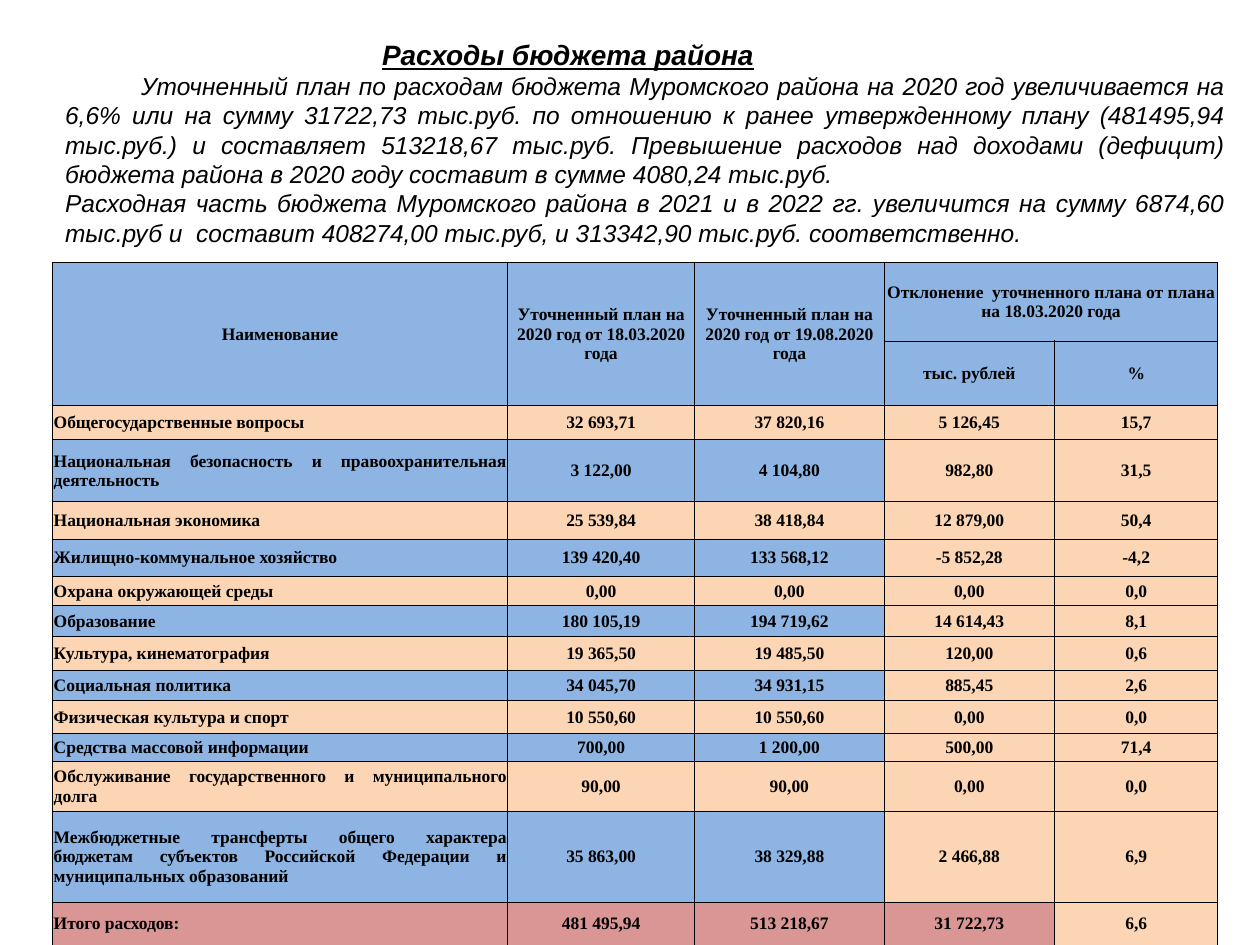
import dataclasses
import typing

import pptx
import pptx.dml.color
import pptx.enum.text
import pptx.oxml
import pptx.oxml.ns
import pptx.util

Pt = pptx.util.Pt
Align = pptx.enum.text.PP_ALIGN
Anchor = pptx.enum.text.MSO_ANCHOR


@dataclasses.dataclass(frozen=True)
class Theme:
    ink: str = "000000"
    blue: str = "8DB4E2"
    peach: str = "FCD5B4"
    rose: str = "DA9694"
    sans: str = "Arial"
    serif: str = "Times New Roman"
    title: float = 16
    body: float = 14
    cell: float = 10
    border: float = 0.5


class Item(typing.NamedTuple):
    name: str
    plan: str
    update: str
    change: str
    percent: str
    height: float


class Head(typing.NamedTuple):
    text: str
    row: int
    col: int
    rows: int = 1
    cols: int = 1


THEME = Theme()
TITLE = "Расходы бюджета района"
BODY = [
    "Уточненный план по расходам бюджета Муромского района на 2020 год увеличивается на 6,6% "
    "или на сумму 31722,73 тыс.руб. по отношению к ранее утвержденному плану (481495,94 тыс.руб.) "
    "и составляет 513218,67 тыс.руб. Превышение расходов над доходами (дефицит) бюджета района "
    "в 2020 году составит в сумме 4080,24 тыс.руб.",
    "Расходная часть бюджета Муромского района в 2021 и в 2022 гг. увеличится на сумму 6874,60 "
    "тыс.руб и  составит 408274,00 тыс.руб, и 313342,90 тыс.руб. соответственно.",
]
WIDTHS = [260, 107, 108.2, 97.4, 93.4]
HEAD_ROWS = [45, 36.8]
HEADS = [
    Head("Наименование", 0, 0, rows=2),
    Head("Уточненный план на 2020 год от 18.03.2020 года", 0, 1, rows=2),
    Head("Уточненный план на 2020 год от 19.08.2020 года", 0, 2, rows=2),
    Head("Отклонение  уточненного плана от плана на 18.03.2020 года", 0, 3, cols=2),
    Head("тыс. рублей", 1, 3),
    Head("%", 1, 4),
]
ITEMS = [
    Item("Общегосударственные вопросы", "32 693,71", "37 820,16", "5 126,45", "15,7", 19.4),
    Item("Национальная безопасность и правоохранительная деятельность",
         "3 122,00", "4 104,80", "982,80", "31,5", 35.4),
    Item("Национальная экономика", "25 539,84", "38 418,84", "12 879,00", "50,4", 21.6),
    Item("Жилищно-коммунальное хозяйство",
         "139 420,40", "133 568,12", "-5 852,28", "-4,2", 21.2),
    Item("Охрана окружающей среды", "0,00", "0,00", "0,00", "0,0", 16.6),
    Item("Образование", "180 105,19", "194 719,62", "14 614,43", "8,1", 17.8),
    Item("Культура, кинематография", "19 365,50", "19 485,50", "120,00", "0,6", 19.4),
    Item("Социальная политика", "34 045,70", "34 931,15", "885,45", "2,6", 17.2),
    Item("Физическая культура и спорт", "10 550,60", "10 550,60", "0,00", "0,0", 18.8),
    Item("Средства массовой информации", "700,00", "1 200,00", "500,00", "71,4", 16),
    Item("Обслуживание государственного и муниципального долга",
         "90,00", "90,00", "0,00", "0,0", 28.6),
    Item("Межбюджетные трансферты общего характера бюджетам субъектов Российской Федерации "
         "и муниципальных образований", "35 863,00", "38 329,88", "2 466,88", "6,9", 52),
    Item("Итого расходов:", "481 495,94", "513 218,67", "31 722,73", "6,6", 24.6),
]


def write(para, text: str, *, size: float, face: str, align=Align.CENTER, bold=False,
          slant=False, under=False, indent: float = 0, tab: float = 0) -> None:
    """Fill a paragraph; tab adds one left tab stop at that distance."""
    props = para._p.get_or_add_pPr()
    if indent:
        props.set("indent", str(Pt(indent)))
    if tab:
        stops = pptx.oxml.parse_xml(
            f'<a:tabLst {pptx.oxml.ns.nsdecls("a")}><a:tab pos="{Pt(tab)}" algn="l"/></a:tabLst>')
        props.append(stops)
    para.alignment = align
    para.space_before = para.space_after = Pt(0)
    para.line_spacing = 1.0
    run = para.add_run()
    run.text = text
    font = run.font
    font.size, font.name = Pt(size), face
    font.bold, font.italic, font.underline = bold, slant, under
    font.color.rgb = pptx.dml.color.RGBColor.from_string(THEME.ink)


def clear(frame) -> None:
    frame.word_wrap = True
    frame.auto_size = pptx.enum.text.MSO_AUTO_SIZE.NONE
    frame.vertical_anchor = Anchor.TOP
    frame.margin_left = frame.margin_right = frame.margin_top = frame.margin_bottom = 0


def paint(cell, fill: str) -> None:
    """Set the borders, fill, margins and anchor of a cell."""
    props = cell._tc.get_or_add_tcPr()
    for side in ("lnL", "lnR", "lnT", "lnB"):
        props.append(pptx.oxml.parse_xml(
            f'<a:{side} {pptx.oxml.ns.nsdecls("a")} w="{Pt(THEME.border)}">'
            f'<a:solidFill><a:srgbClr val="{THEME.ink}"/></a:solidFill></a:{side}>'))
    cell.fill.solid()
    cell.fill.fore_color.rgb = pptx.dml.color.RGBColor.from_string(fill)
    cell.margin_left = cell.margin_right = cell.margin_top = Pt(0.72)
    cell.margin_bottom = 0
    cell.vertical_anchor = Anchor.MIDDLE


def label(cell, text: str, align=Align.CENTER) -> None:
    write(cell.text_frame.paragraphs[0], text, size=THEME.cell, face=THEME.serif,
          bold=True, align=align)


def shade(row: int, col: int) -> str:
    """Give the fill of a cell, counting rows below the header."""
    if row < 0:
        return THEME.blue
    if col == 4:
        return THEME.peach
    if row == len(ITEMS) - 1:
        return THEME.rose
    return THEME.blue if row % 2 and col < 3 else THEME.peach


def add_text(slide) -> None:
    title = slide.shapes.title
    title.left, title.top, title.width, title.height = Pt(218.3), Pt(21.6), Pt(306), Pt(18.4)
    clear(title.text_frame)
    write(title.text_frame.paragraphs[0], TITLE + "\t", size=THEME.title, face=THEME.sans,
          align=Align.LEFT, bold=True, slant=True, under=True, tab=301)
    frame = slide.shapes.add_textbox(Pt(37.2), Pt(40.4), Pt(663), Pt(104)).text_frame
    clear(frame)
    for i, text in enumerate(BODY):
        para = frame.add_paragraph() if i else frame.paragraphs[0]
        write(para, text, size=THEME.body, face=THEME.sans, align=Align.JUSTIFY,
              slant=True, indent=0 if i else 43.4)


def add_grid(slide) -> None:
    heights = HEAD_ROWS + [item.height for item in ITEMS]
    table = slide.shapes.add_table(len(heights), len(WIDTHS), Pt(30), Pt(149.8),
                                   Pt(sum(WIDTHS)), Pt(sum(heights))).table
    for column, width in zip(table.columns, WIDTHS):
        column.width = Pt(width)
    for r, height in enumerate(heights):
        table.rows[r].height = Pt(height)
        for c in range(len(WIDTHS)):
            paint(table.cell(r, c), shade(r - len(HEAD_ROWS), c))
    for head in HEADS:
        cell = table.cell(head.row, head.col)
        if head.rows * head.cols > 1:
            cell.merge(table.cell(head.row + head.rows - 1, head.col + head.cols - 1))
        label(cell, head.text)
    for r, item in enumerate(ITEMS, len(HEAD_ROWS)):
        start = Align.LEFT if item is ITEMS[-1] else Align.JUSTIFY
        for c, text in enumerate(item[:len(WIDTHS)]):
            label(table.cell(r, c), text, Align.CENTER if c else start)


def main() -> None:
    deck = pptx.Presentation()
    deck.slide_width, deck.slide_height = Pt(720), Pt(540)
    slide = deck.slides.add_slide(deck.slide_layouts[5])
    add_text(slide)
    add_grid(slide)
    deck.save("out.pptx")


if __name__ == "__main__":
    main()
